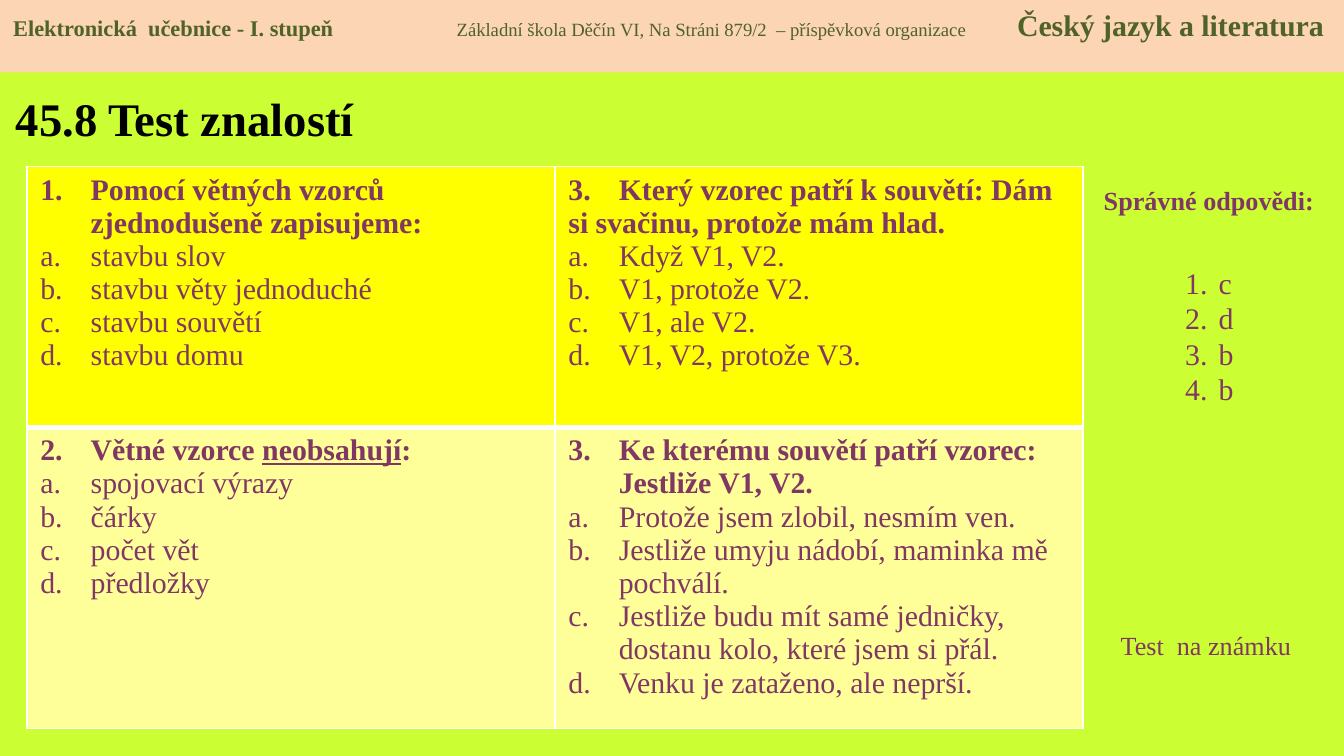
from copy import deepcopy
from dataclasses import dataclass

from lxml import etree
from pptx import Presentation
from pptx.dml.color import RGBColor
from pptx.enum import shapes, text
from pptx.oxml import ns
from pptx.util import Pt


@dataclass(frozen=True)
class Theme:
    font: str = "Times New Roman"
    back: str = "CCFF33"
    band: str = "FCD5B5"
    green: str = "4F6228"
    plum: str = "813763"
    black: str = "000000"
    white: str = "FFFFFF"
    rows: tuple = ("FFFF00", "FFFF99")
    title: int = 25
    body: int = 16
    note: int = 14
    head: int = 12
    small: int = 10


T = Theme()
NUM, ABC = "arabicPeriod", "alphaLcPeriod"
BOLD = {"bold": True}

# Each question: number, runs of the heading, unindented rest, options
QUIZ = [
    [(1, [("Pomocí větných vzorců zjednodušeně zapisujeme:", BOLD)], None,
      ["stavbu slov", "stavbu věty jednoduché", "stavbu souvětí", "stavbu domu"]),
     (3, [("Který vzorec patří k souvětí: Dám", BOLD)],
      "si svačinu, protože mám hlad.",
      ["Když V1, V2.", "V1, protože V2.", "V1, ale V2.", "V1, V2, protože V3."])],
    [(2, [("Větné vzorce ", BOLD),
          ("neobsahují", {"bold": True, "underline": True}), (":", BOLD)], None,
      ["spojovací výrazy", "čárky", "počet vět", "předložky"]),
     (3, [("Ke kterému souvětí patří vzorec: \nJestliže V1, V2.", BOLD)], None,
      ["Protože jsem zlobil, nesmím ven.",
       "Jestliže umyju nádobí, maminka mě pochválí.",
       "Jestliže budu mít samé jedničky, dostanu kolo, které jsem si přál.",
       "Venku je zataženo, ale neprší."])],
]


def add(root, tag, **attrs):
    return etree.SubElement(root, ns.qn(tag), {k: str(v) for k, v in attrs.items()})


def paint(fill, color):
    fill.solid()
    fill.fore_color.rgb = RGBColor.from_string(color)


def write(para, words, color=T.plum, **form):
    """Add runs to a paragraph; a newline in the words breaks the line."""
    look = {"name": T.font, "size": Pt(T.body), "bold": False, **form}
    for i, part in enumerate(words.split("\n")):
        if i:
            para.add_line_break()
            para._p[-1].append(deepcopy(run.font._element))
        run = para.add_run()
        run.text = part
        for key, val in look.items():
            setattr(run.font, key, val)
        run.font.color.rgb = RGBColor.from_string(color)


def number(para, kind, hang, start=1):
    props = para._p.get_or_add_pPr()
    props.set("marL", str(hang))
    props.set("indent", str(-hang))
    extra = {"startAt": start} if start > 1 else {}
    add(props, "a:buAutoNum", type=kind, **extra)


def next_para(frame):
    first = frame.paragraphs[0]
    return frame.add_paragraph() if first.runs else first


def text_box(slide, box, **form):
    frame = slide.shapes.add_textbox(*map(Pt, box)).text_frame
    for key, val in {"word_wrap": True, **form}.items():
        setattr(frame, key, val)
    return frame


def header(slide, box):
    band = slide.shapes.add_shape(shapes.MSO_SHAPE.RECTANGLE, *map(Pt, box))
    band.shadow.inherit = False
    paint(band.fill, T.band)
    band.line.fill.background()
    frame = band.text_frame
    frame.vertical_anchor = text.MSO_ANCHOR.TOP
    para = frame.paragraphs[0]
    para.alignment = text.PP_ALIGN.LEFT
    tabs = add(para._p.get_or_add_pPr(), "a:tabLst")
    for stop in (237.6, 537.8):
        add(tabs, "a:tab", pos=Pt(stop), algn="l")
    parts = [
        ("Elektronická  učebnice - I. stupeň\t", T.head, True),
        ("Základní škola Děčín VI, Na Stráni 879/2  – příspěvková organizace\t",
         T.small, False),
        ("Český jazyk a literatura", T.body, True),
    ]
    for words, size, bold in parts:
        write(para, words, T.green, size=Pt(size), bold=bold)


def title(slide, box):
    frame = text_box(slide, box, vertical_anchor=text.MSO_ANCHOR.MIDDLE)
    write(frame.paragraphs[0], "45.8 Test znalostí", T.black,
          size=Pt(T.title), bold=True)


def border(cell, **widths):
    """Draw white cell borders; they come before the fill in the XML."""
    props = cell._tc.get_or_add_tcPr()
    for i, (side, width) in enumerate(widths.items()):
        line = add(props, f"a:ln{side}", w=Pt(width))
        add(add(line, "a:solidFill"), "a:srgbClr", val=T.white)
        props.insert(i, line)


def question(frame, start, runs, rest, options):
    hang = Pt(27)
    para = frame.paragraphs[0]
    number(para, NUM, hang, start)
    for words, form in runs:
        write(para, words, **form)
    if rest:
        write(next_para(frame), rest, bold=True)
    for words in options:
        para = next_para(frame)
        number(para, ABC, hang)
        write(para, words)


def quiz(slide, box):
    x, y, w, h = box
    grid = slide.shapes.add_table(2, 2, *map(Pt, box)).table
    top = 139.7
    for row, high in zip(grid.rows, (top, h - top)):
        row.height = Pt(high)
    for col in grid.columns:
        col.width = Pt(w / 2)
    for r, line in enumerate(QUIZ):
        for c, item in enumerate(line):
            cell = grid.cell(r, c)
            paint(cell.fill, T.rows[r])
            border(cell, L=1, R=1, T=3 if r else 1, B=1 if r else 3)
            question(cell.text_frame, *item)


def answers(slide, box):
    x, y, w, h = box
    # Heading
    para = text_box(slide, (x, y, w, 24.5)).paragraphs[0]
    para.alignment = text.PP_ALIGN.CENTER
    write(para, "Správné odpovědi:", size=Pt(T.note), bold=True)
    # Key
    frame = text_box(slide, (x + 48.2, y + 23.8, 39.6, 143.3),
                     margin_top=Pt(23.2), margin_right=0)
    for letter in "cdbb":
        para = next_para(frame)
        number(para, NUM, Pt(18))
        para.line_spacing = Pt(19)
        write(para, letter)
    # Closing note
    frame = text_box(slide, (x + 13.7, y + h - 24.5, 113, 24.5))
    write(frame.paragraphs[0], "Test  na známku", size=Pt(T.note))


def main():
    deck = Presentation()
    deck.slide_width, deck.slide_height = Pt(720), Pt(405)
    slide = deck.slides.add_slide(deck.slide_layouts[6])
    paint(slide.background.fill, T.back)
    title(slide, (1.4, 39.6, 229.7, 46.8))
    quiz(slide, (14.4, 89.3, 565.9, 301))
    answers(slide, (579.6, 95, 136.1, 262.9))
    header(slide, (0, 0, 720, 38.9))
    deck.save("out.pptx")


if __name__ == "__main__":
    main()
